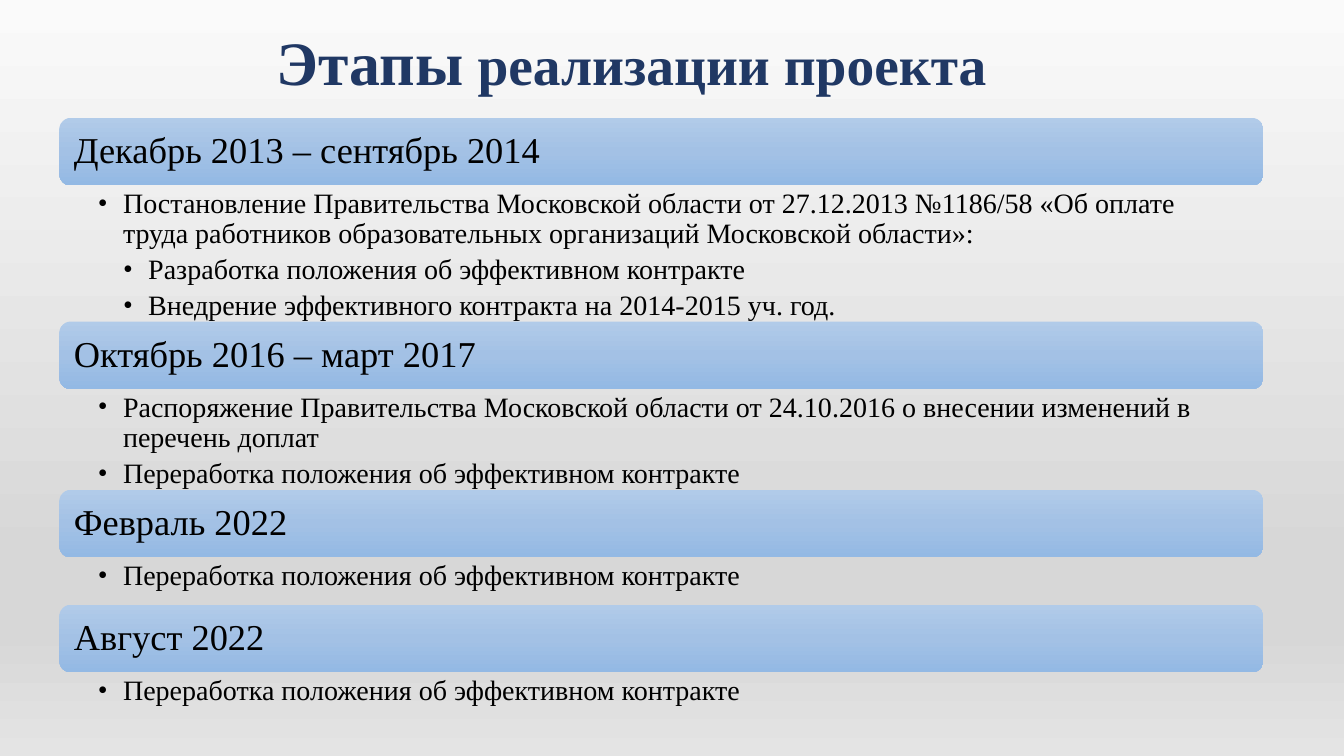
from lxml import etree
from pptx import Presentation
from pptx.dml.color import RGBColor
from pptx.enum.shapes import MSO_SHAPE
from pptx.enum.text import MSO_ANCHOR, MSO_AUTO_SIZE, PP_ALIGN
from pptx.oxml.ns import qn
from pptx.util import Inches, Pt

ROUNDED = MSO_SHAPE.ROUNDED_RECTANGLE
TOP, MIDDLE = MSO_ANCHOR.TOP, MSO_ANCHOR.MIDDLE
LEFT, CENTER = PP_ALIGN.LEFT, PP_ALIGN.CENTER
NO_FIT = MSO_AUTO_SIZE.NONE

# Content: each list item is (level, text); level 0 has no bullet
TITLE = [("Этапы", 44.1), (" реализации проекта", 39.6)]
REVISION = "Переработка положения об эффективном контракте"
STAGES = [  # period, list height, items
    ("Декабрь 2013 – сентябрь 2014", 1.35, [
        (1, "Постановление Правительства Московской области от 27.12.2013 №1186/58 "
            "«Об оплате труда работников образовательных организаций Московской области»:"),
        (2, "Разработка положения об эффективном контракте"),
        (2, "Внедрение эффективного контракта на 2014-2015 уч. год.")]),
    ("Октябрь 2016 – март 2017", 1.0, [
        (1, "Распоряжение Правительства Московской области от 24.10.2016 "
            "о внесении изменений в перечень доплат"),
        (1, REVISION)]),
    ("Февраль 2022", 0.47, [(1, REVISION)]),
    ("Август 2022", 0.47, [(1, REVISION)]),
]

FONT = "Times New Roman"
COLORS = {"title": "203864", "text": "000000"}
BACKDROP = [(0, "FAFAFA"), (74, "D7D7D7"), (83, "D7D7D7"), (100, "E4E4E4")]
BAR_FILL = [(0, "B1CBE9"), (50, "A3C1E5"), (100, "93B9E4")]
STAGE_LEFT, STAGE_TOP, STAGE_WIDTH, BAR_HEIGHT = 0.59, 1.17, 11.94, 0.67
INDENT = 0.25


def paint_gradient(fill, element, stops):
    """Fill from top to bottom with (percent, colour) stops."""
    fill.gradient()
    fill.gradient_angle = 270
    stop_list = next(element.iter(qn("a:gsLst")))
    for old_stop in list(stop_list):
        stop_list.remove(old_stop)
    for percent, color in stops:
        stop = etree.SubElement(stop_list, qn("a:gs"), pos=str(percent * 1000))
        etree.SubElement(stop, qn("a:srgbClr"), val=color)


def set_bullet(paragraph, level):
    properties = paragraph._p.get_or_add_pPr()
    properties.set("marL", str(Inches(INDENT * level)))
    properties.set("indent", str(-Inches(INDENT) if level else 0))
    if level:
        etree.SubElement(properties, qn("a:buFont"), typeface=FONT)
        etree.SubElement(properties, qn("a:buChar"), char="•")
    else:
        etree.SubElement(properties, qn("a:buNone"))


def write(shape, lines, color="text", bold=False, align=LEFT, anchor=MIDDLE,
          space_after=0, insets=(0.1, 0.05, 0.1, 0.05)):
    """Write lines of (level, [(text, size), ...]) into a shape."""
    frame = shape.text_frame
    frame.word_wrap = True
    frame.auto_size = NO_FIT
    frame.vertical_anchor = anchor
    (frame.margin_left, frame.margin_top,
     frame.margin_right, frame.margin_bottom) = map(Inches, insets)
    for number, (level, runs) in enumerate(lines):
        paragraph = frame.add_paragraph() if number else frame.paragraphs[0]
        paragraph.alignment = align
        paragraph.line_spacing = 0.9
        paragraph.space_before = Pt(0)
        paragraph.space_after = Pt(space_after)
        paragraph.level = level
        set_bullet(paragraph, level)
        for text, size in runs:
            run = paragraph.add_run()
            run.text = text
            run.font.name = FONT
            run.font.size = Pt(size)
            run.font.bold = bold
            run.font.color.rgb = RGBColor.from_string(COLORS[color])


def place(shape, left, top, width, height):
    shape.left, shape.top = Inches(left), Inches(top)
    shape.width, shape.height = Inches(width), Inches(height)


presentation = Presentation()
presentation.slide_width = Inches(13.33)
presentation.slide_height = Inches(7.5)

# The comparison layout holds a title and four body placeholders
slide = presentation.slides.add_slide(presentation.slide_layouts[4])
paint_gradient(slide.background.fill, slide.element, BACKDROP)

# Title
title, *stage_lists = slide.placeholders
place(title, 2.18, 0.29, 8.17, 0.71)
write(title, [(0, TITLE)], color="title", bold=True, align=CENTER)

# Stages: a bar with the period, then its list, stacked without gaps
top = STAGE_TOP
for (period, list_height, items), stage_list in zip(STAGES, stage_lists):
    bar = slide.shapes.add_shape(ROUNDED, 0, 0, 0, 0)
    place(bar, STAGE_LEFT, top, STAGE_WIDTH, BAR_HEIGHT)
    bar.shadow.inherit = False
    bar.line.fill.background()
    paint_gradient(bar.fill, bar.element, BAR_FILL)
    write(bar, [(0, [(period, 26)])], insets=(0.11, 0.11, 0.11, 0.11))
    top += BAR_HEIGHT

    place(stage_list, STAGE_LEFT, top, STAGE_WIDTH, list_height)
    write(stage_list, [(level, [(text, 20)]) for level, text in items],
          anchor=TOP, space_after=4, insets=(0.38, 0.04, 0.2, 0.04))
    top += list_height

presentation.save("out.pptx")
